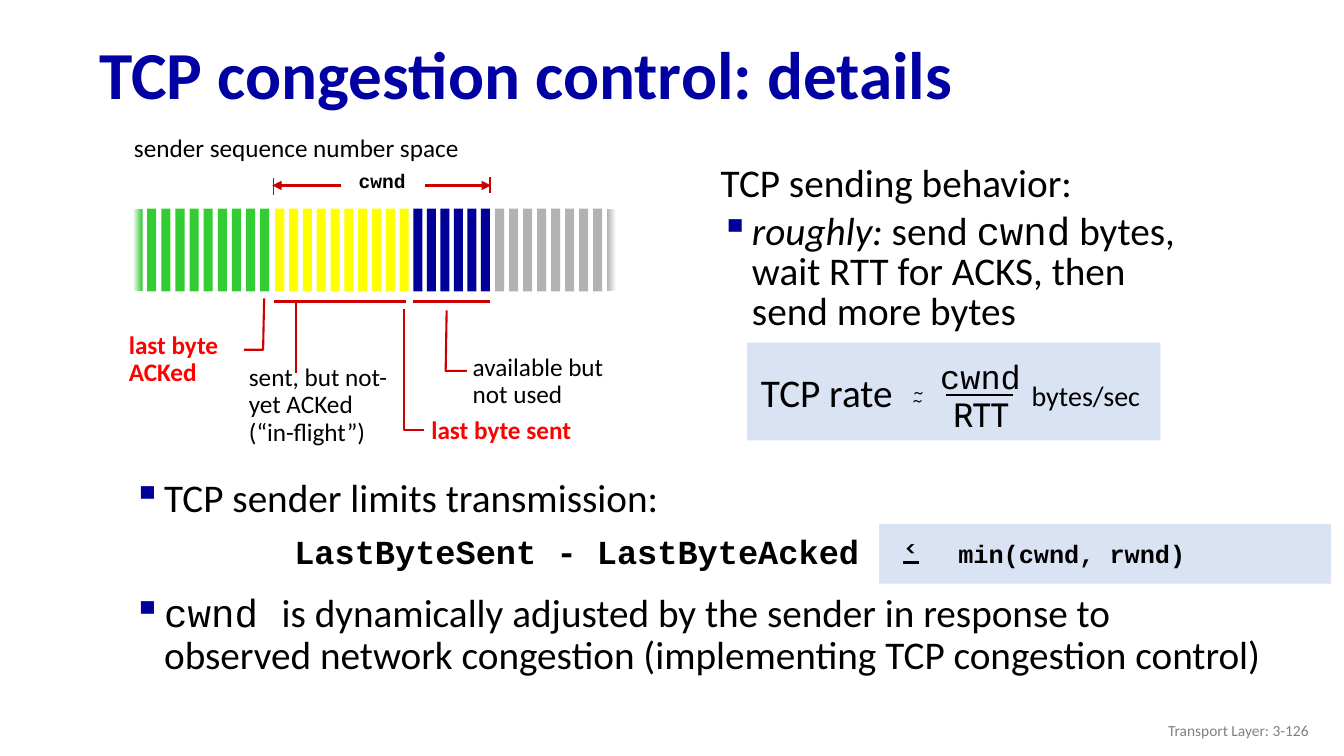
from dataclasses import dataclass
from typing import NamedTuple

from lxml import etree
from pptx import Presentation
from pptx.dml.color import RGBColor
from pptx.enum.shapes import MSO_CONNECTOR, MSO_SHAPE
from pptx.enum.text import MSO_ANCHOR, MSO_AUTO_SIZE, PP_ALIGN
from pptx.oxml.ns import qn
from pptx.util import Emu, Inches, Pt

STRAIGHT = MSO_CONNECTOR.STRAIGHT
RECT = MSO_SHAPE.RECTANGLE
TOP, MIDDLE = MSO_ANCHOR.TOP, MSO_ANCHOR.MIDDLE
FIT, FIXED = MSO_AUTO_SIZE.SHAPE_TO_FIT_TEXT, MSO_AUTO_SIZE.NONE
LEFT, CENTER, RIGHT = PP_ALIGN.LEFT, PP_ALIGN.CENTER, PP_ALIGN.RIGHT

BLACK = RGBColor(0x00, 0x00, 0x00)
WHITE = RGBColor(0xFF, 0xFF, 0xFF)
NAVY = RGBColor(0x00, 0x00, 0xA3)
BLUE = RGBColor(0x00, 0x00, 0x99)
PALE = RGBColor(0xDA, 0xE3, 0xF3)
RED = RGBColor(0xFF, 0x00, 0x00)
CRIMSON = RGBColor(0xCC, 0x00, 0x00)
GREEN = RGBColor(0x33, 0xCC, 0x33)
YELLOW = RGBColor(0xFF, 0xFF, 0x00)
SILVER = RGBColor(0xB2, 0xB2, 0xB2)
GRAY = RGBColor(0x80, 0x80, 0x80)

SANS, MONO, CABIN = "Calibri", "Courier New", "Cabin"
CELL = Inches(0.1)  # one column or row of the grid
HANG = 3.1

HEAD = {"name": SANS, "size": Pt(48), "bold": True}
BODY = {"name": SANS, "size": Pt(28)}
ROUGH = {**BODY, "italic": True}
CODE = {"name": MONO, "size": Pt(28)}
BYTES = {"name": MONO, "size": Pt(24), "bold": True}
LIMIT = {"name": MONO, "size": Pt(18), "bold": True}
WINDOW = {"name": MONO, "size": Pt(14), "bold": True}
LESS = {"name": CABIN, "size": Pt(16), "bold": True}
TILDE = {"name": CABIN, "size": Pt(18)}
UPPER = {"name": MONO, "size": Pt(24)}
LOWER = {"name": CABIN, "size": Pt(24)}
UNIT = {"name": SANS, "size": Pt(20)}
NOTE = {"name": SANS, "size": Pt(18)}
STRONG = {**NOTE, "bold": True}
FOOT = {"name": SANS, "size": Pt(11)}


class Box(NamedTuple):
    left: float
    top: float
    width: float
    height: float


@dataclass
class Para:
    runs: list[tuple[str, dict]]
    before: float = 0
    indent: float = 0
    hang: float = 0
    bullet: bool = False


@dataclass
class Label:
    text: str
    box: Box
    style: dict
    color: RGBColor = BLACK
    align: PP_ALIGN = CENTER
    wrap: bool = False
    space: float = 1.0
    anchor: MSO_ANCHOR = TOP
    size: MSO_AUTO_SIZE = FIT


@dataclass
class Line:
    x1: float
    y1: float
    x2: float
    y2: float
    width: float = 2.25
    color: RGBColor = CRIMSON
    arrow: bool = False


class Block(NamedTuple):
    """A run of equal bars in the number space."""
    left: float
    pitch: float
    count: int
    color: RGBColor


def grid(*cells: float) -> list[Emu]:
    return [Emu(round(cell * CELL)) for cell in cells]


def add_rect(shapes, box: Box, color: RGBColor, fade: tuple = ()) -> None:
    """Fill with one colour, or fade from the first colour to the second."""
    rect = shapes.add_shape(RECT, *grid(*box))
    rect.shadow.inherit = False
    rect.line.fill.background()
    if fade:
        rect.fill.gradient()
        rect.fill.gradient_angle = 0
        for stop, tint in zip(rect.fill.gradient_stops, fade):
            stop.color.rgb = tint
    else:
        rect.fill.solid()
        rect.fill.fore_color.rgb = color


def add_line(shapes, line: Line) -> None:
    link = shapes.add_connector(STRAIGHT, *grid(line.x1, line.y1, line.x2, line.y2))
    link.line.color.rgb = line.color
    link.line.width = Pt(line.width)
    if line.arrow:
        etree.SubElement(link.line._get_or_add_ln(), qn("a:tailEnd"), type="triangle")
    etree.SubElement(link._element.spPr, qn("a:effectLst"))


def add_elbow(shapes, points: list[tuple[float, float]]) -> None:
    first, *rest = [tuple(grid(*point)) for point in points]
    pen = shapes.build_freeform(*first, scale=1.0)
    pen.add_line_segments(rest, close=False)
    elbow = pen.convert_to_shape()
    elbow.shadow.inherit = False
    elbow.fill.background()
    elbow.line.color.rgb = CRIMSON
    elbow.line.width = Pt(1.5)


def add_run(para, text: str, style: dict, color: RGBColor) -> None:
    run = para.add_run()
    run.text = text
    for key, value in style.items():
        setattr(run.font, key, value)
    run.font.color.rgb = color


def add_frame(shapes, box: Box, wrap: bool):
    frame = shapes.add_textbox(*grid(*box)).text_frame
    frame.word_wrap = wrap
    return frame


def add_label(shapes, label: Label) -> None:
    frame = add_frame(shapes, label.box, label.wrap)
    frame.auto_size = label.size
    frame.vertical_anchor = label.anchor
    for i, text in enumerate(label.text.split("\n")):
        para = frame.add_paragraph() if i else frame.paragraphs[0]
        para.alignment = label.align
        para.line_spacing = label.space
        add_run(para, text, label.style, label.color)


def add_list(shapes, box: Box, space: float, items: list[Para]) -> None:
    frame = add_frame(shapes, box, True)
    for i, item in enumerate(items):
        para = frame.add_paragraph() if i else frame.paragraphs[0]
        para.line_spacing = space
        para.space_before = Pt(item.before)
        props = para._p.get_or_add_pPr()
        left, hang = grid(item.indent, -item.hang)
        props.set("marL", str(left))
        props.set("indent", str(hang))
        if item.bullet:
            tint = etree.SubElement(props, qn("a:buClr"))
            etree.SubElement(tint, qn("a:srgbClr"), val=str(BLUE))
            etree.SubElement(props, qn("a:buChar"), char="▪")
        for text, style in item.runs:
            add_run(para, text, style, BLACK)


PANELS = [Box(87.2, 52, 44.8, 5.9), Box(74.1, 34, 41, 9.7)]
BLOCKS = [Block(13.2, 1.4, 10, GREEN), Block(27.3, 1.37, 10, YELLOW),
          Block(41, 1.34, 6, BLUE), Block(49.1, 1.39, 9, SILVER)]
LIMITS = [
    Para([("TCP sender limits transmission:", BODY)], 6, HANG, HANG, True),
    Para([("LastByteSent - LastByteAcked", BYTES)], 10, 16),
    Para([("cwnd ", CODE), ("is dynamically adjusted by the sender in response to observed "
          "network congestion (implementing TCP congestion control)", BODY)],
         16, HANG, HANG, True),
]
SENDING = [
    Para([("TCP sending behavior:", BODY)], 6, HANG, HANG),
    Para([("roughly:", ROUGH), (" send ", BODY), ("cwnd", CODE),
          (" bytes, wait RTT for ACKS, then send more bytes", BODY)], 6, HANG, HANG, True),
]
LABELS = [
    Label("TCP congestion control: details", Box(8.9, 2.8, 124.4, 9.8), HEAD, NAVY,
          LEFT, True, 0.9, MIDDLE, FIXED),
    Label("<", Box(88.3, 52.4, 4.1, 4), LESS),
    Label("min(cwnd, rwnd)", Box(94, 52.9, 24.6, 4.4), LIMIT),
    Label("TCP rate", Box(74.4, 36, 15.2, 5.7), BODY),
    Label("~", Box(86, 36.6, 10.2, 4), TILDE, wrap=True),
    Label("~", Box(85.9, 37.4, 10.2, 4), TILDE, wrap=True),
    Label("cwnd", Box(92.2, 34.8, 10.1, 5.1), UPPER),
    Label("RTT", Box(93.3, 38.6, 8, 5.1), LOWER),
    Label("bytes/sec", Box(101.2, 37.1, 13, 4.4), UNIT),
    Label("sender sequence number space", Box(12.3, 12.6, 35.2, 4), NOTE, align=LEFT),
    Label("cwnd", Box(33.5, 16.5, 8.8, 3.8), WINDOW, space=0.9),
    Label("last byte\nACKed", Box(11.8, 32.5, 11.6, 6.5), STRONG, RED, LEFT, True, 0.9),
    Label("last byte sent", Box(41.8, 41, 17.5, 3.7), STRONG, RED, LEFT, True, 0.9),
    Label("available but not used", Box(45.9, 34.7, 17.5, 6.5), NOTE, BLACK, LEFT, True, 0.9),
    Label("sent, but not-yet ACKed\n(“in-flight”)", Box(23.7, 35.7, 18.2, 9.2), NOTE,
          BLACK, LEFT, True, 0.9),
    Label("Transport Layer: 3-126", Box(100.8, 70.5, 30, 4), FOOT, GRAY, RIGHT, True,
          anchor=MIDDLE, size=FIXED),
]
LINES = [
    Line(89.6, 55.8, 91.2, 55.8, 1.5, BLACK), Line(93.8, 39.2, 100.5, 39.2, 1.5, BLACK),
    Line(42.2, 18.4, 48.7, 18.4, arrow=True), Line(33.8, 18.4, 27, 18.4, arrow=True),
    Line(48.6, 17.6, 48.6, 19.1, 0.75), Line(27.1, 19.3, 27.1, 17.7, 0.75),
    Line(41, 29.9, 48.6, 29.9), Line(27.2, 29.9, 40.3, 29.9),
    Line(29.4, 30.1, 29.4, 37, 1.5, RGBColor(0xC0, 0x00, 0x00)),
]
ELBOWS = [
    [(26.2, 29.6), (26.1, 34.7), (24.2, 34.7)],
    [(40.1, 30.7), (40.1, 42.7), (42.1, 42.7)],
    [(44.3, 30.8), (44.2, 36.8), (46.3, 36.8)],
]


def main() -> None:
    deck = Presentation()
    deck.slide_width, deck.slide_height = Inches(13.33), Inches(7.5)
    shapes = deck.slides.add_slide(deck.slide_layouts[6]).shapes
    for panel in PANELS:
        add_rect(shapes, panel, PALE)
    add_list(shapes, Box(12.2, 47, 113.8, 21.9), 0.9, LIMITS)
    add_list(shapes, Box(70.5, 15.9, 50.2, 26.8), 0.85, SENDING)
    fades = {(0, 0): (WHITE, GREEN), (3, 8): (SILVER, WHITE)}
    for b, block in enumerate(BLOCKS):
        for i in range(block.count):
            bar = Box(block.left + i * block.pitch, 20.7, 0.9, 8.2)
            add_rect(shapes, bar, block.color, fades.get((b, i), ()))
    for line in LINES:
        add_line(shapes, line)
    for elbow in ELBOWS:
        add_elbow(shapes, elbow)
    for label in LABELS:
        add_label(shapes, label)
    deck.save("out.pptx")


if __name__ == "__main__":
    main()
